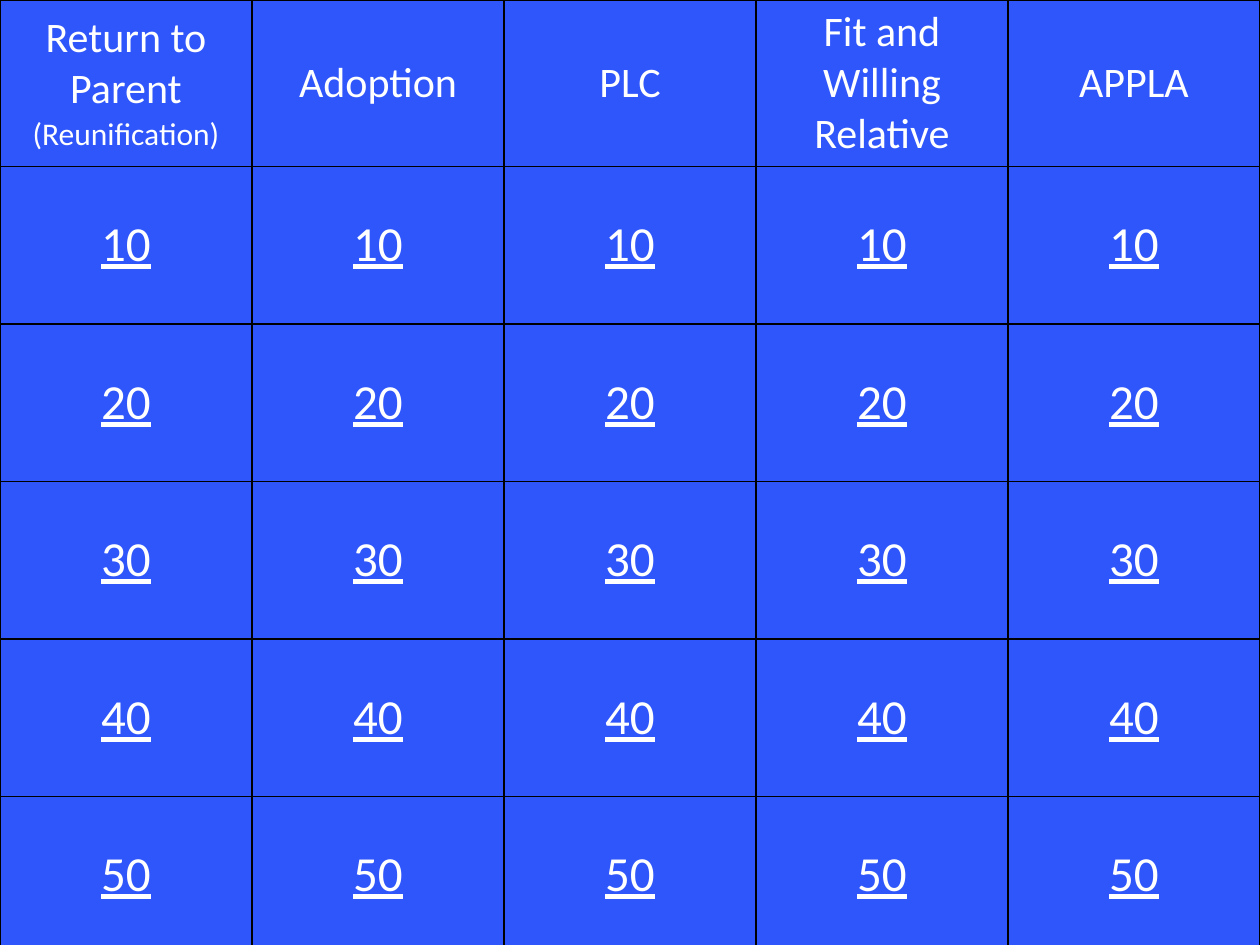
from lxml import etree
from pptx import Presentation
from pptx.dml.color import RGBColor
from pptx.enum.text import MSO_ANCHOR, PP_ALIGN
from pptx.oxml.ns import qn
from pptx.util import Inches, Pt

COLORS = {"board": "2F56FB", "text": "FFFFFF", "grid": "000000"}
CATEGORIES = [
    [("Return to Parent ", 24), ("(Reunification)", 18)],
    [("Adoption", 24)],
    [("PLC", 24)],
    [("Fit and Willing Relative", 24)],
    [("APPLA", 24)],
]
POINTS = [10, 20, 30, 40, 50]
CELL_FORMAT = {
    "vertical_anchor": MSO_ANCHOR.MIDDLE,
    "margin_left": Inches(0.1),
    "margin_right": Inches(0.1),
    "margin_top": Inches(0.05),
    "margin_bottom": Inches(0.05),
}


def add_borders(cell):
    tcPr = cell._tc.get_or_add_tcPr()
    for i, side in enumerate(["lnL", "lnR", "lnT", "lnB"]):
        ln = etree.Element(qn(f"a:{side}"), w=str(Pt(1)))
        fill = etree.SubElement(ln, qn("a:solidFill"))
        etree.SubElement(fill, qn("a:srgbClr"), val=COLORS["grid"])
        tcPr.insert(i, ln)


prs = Presentation()
prs.slide_width, prs.slide_height = Inches(10), Inches(7.5)
s = prs.slides.add_slide(prs.slide_layouts[6])
s.background.fill.solid()
s.background.fill.fore_color.rgb = RGBColor.from_string(COLORS["board"])

rows = [CATEGORIES] + [[[(str(n), 28)]] * len(CATEGORIES) for n in POINTS]
table = s.shapes.add_table(
    len(rows), len(CATEGORIES), Inches(0), Inches(0), Inches(10), Inches(7.55)
).table
table.first_row = table.horz_banding = False
for col in table.columns:
    col.width = Inches(2)
for i, row in enumerate(table.rows):
    row.height = Inches(1.25 if i else 1.3)

for i, row in enumerate(rows):
    for j, runs in enumerate(row):
        cell = table.cell(i, j)
        for name, value in CELL_FORMAT.items():
            setattr(cell, name, value)
        cell.fill.background()
        add_borders(cell)
        p = cell.text_frame.paragraphs[0]
        p.alignment = PP_ALIGN.CENTER
        for text, size in runs:
            r = p.add_run()
            r.text = text
            font = {"name": "Calibri", "size": Pt(size), "bold": False, "underline": i > 0}
            for name, value in font.items():
                setattr(r.font, name, value)
            r.font.color.rgb = RGBColor.from_string(COLORS["text"])

prs.save("out.pptx")
